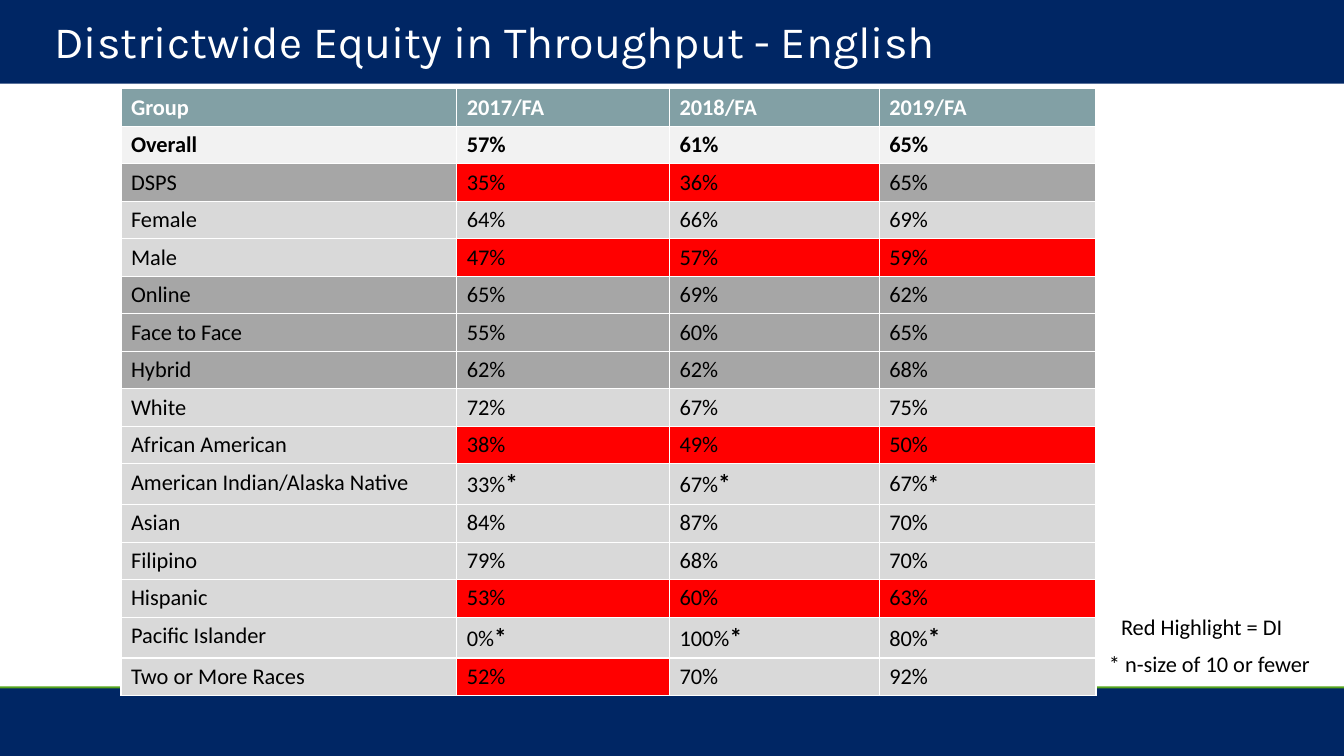
from dataclasses import dataclass

from pptx import Presentation
from pptx import util as u
from pptx.dml.color import RGBColor
from pptx.enum import shapes, text

NAVY, GREEN, TEAL = "002664", "55A51C", "82A0A5"
WHITE, BLACK, RED = "FFFFFF", "000000", "FF0000"
PALE, LIGHT, DARK = "F2F2F2", "D9D9D9", "A6A6A6"


@dataclass
class Band:
    top: float
    height: float
    color: str


@dataclass
class Label:
    box: tuple[float, float, float, float]
    words: str
    size: int = 16
    font: str = "Calibri"
    color: str = BLACK


@dataclass
class Row:
    group: str
    rates: str
    fill: str = LIGHT
    flagged: str = ""
    color: str = BLACK
    bold: bool = False
    height: float = 0.37
    star_sizes: tuple[int, int, int] = (18, 18, 18)
    anchor: text.MSO_ANCHOR = text.MSO_ANCHOR.TOP


BANDS = [Band(6.81, 0.69, GREEN), Band(6.83, 0.67, NAVY), Band(0, 0.83, NAVY)]
LABELS = [
    Label((0.44, 0.06, 12.56, 0.69), "Districtwide Equity in Throughput - English", 32, "Karla", WHITE),
    Label((10.9, 6.4, 2.4, 0.37), "* n-size of 10 or fewer"),
    Label((11.02, 6.03, 2.22, 0.37), "Red Highlight = DI"),
]
COLUMN_WIDTHS = [3.33, 2.11, 2.08, 2.15]
ROWS = [
    Row("Group", "2017/FA 2018/FA 2019/FA", TEAL, color=WHITE, bold=True),
    Row("Overall", "57% 61% 65%", PALE, bold=True),
    Row("DSPS", "35% 36% 65%", DARK, "12"),
    Row("Female", "64% 66% 69%"),
    Row("Male", "47% 57% 59%", flagged="123"),
    Row("Online", "65% 69% 62%", DARK),
    Row("Face to Face", "55% 60% 65%", DARK),
    Row("Hybrid", "62% 62% 68%", DARK),
    Row("White", "72% 67% 75%"),
    Row("African American", "38% 49% 50%", flagged="123"),
    Row("American Indian/Alaska Native", "33%* 67%* 67%*", height=0.4,
        star_sizes=(18, 18, 16), anchor=text.MSO_ANCHOR.MIDDLE),
    Row("Asian", "84% 87% 70%"),
    Row("Filipino", "79% 68% 70%"),
    Row("Hispanic", "53% 60% 63%", flagged="123"),
    Row("Pacific Islander", "0%* 100%* 80%*", height=0.4),
    Row("Two or More Races", "52% 70% 92%", flagged="1"),
]


def rgb(color: str) -> RGBColor:
    return RGBColor.from_string(color)


def add_run(p, words: str, size: int, color: str, font: str = "Calibri", bold: bool = False) -> None:
    r = p.add_run()
    r.text = words
    for name, value in {"size": u.Pt(size), "name": font, "bold": bold}.items():
        setattr(r.font, name, value)
    r.font.color.rgb = rgb(color)


def draw_band(s, band: Band, width: u.Length) -> None:
    sp = s.shapes.add_shape(shapes.MSO_SHAPE.RECTANGLE, 0, u.Inches(band.top), width, u.Inches(band.height))
    sp.shadow.inherit = False
    sp.fill.solid()
    sp.fill.fore_color.rgb = rgb(band.color)
    sp.line.fill.background()


def draw_label(s, label: Label) -> None:
    tf = s.shapes.add_textbox(*map(u.Inches, label.box)).text_frame
    for name, value in {"word_wrap": True, "vertical_anchor": text.MSO_ANCHOR.MIDDLE}.items():
        setattr(tf, name, value)
    add_run(tf.paragraphs[0], label.words, label.size, label.color, label.font)


def fill_row(table, index: int, row: Row) -> None:
    table.rows[index].height = u.Inches(row.height)
    for column, words in enumerate([row.group, *row.rates.split()]):
        cell = table.cell(index, column)
        cell.fill.solid()
        cell.fill.fore_color.rgb = rgb(RED if str(column) in row.flagged else row.fill)
        p = cell.text_frame.paragraphs[0]
        add_run(p, words.rstrip("*"), 16, row.color, bold=row.bold)
        if column:
            cell.vertical_anchor = row.anchor
        if words.endswith("*"):
            add_run(p, "*", row.star_sizes[column - 1], row.color, bold=True)


def draw_table(s) -> None:
    height = sum(row.height for row in ROWS)
    frame = s.shapes.add_table(len(ROWS), len(COLUMN_WIDTHS), u.Inches(1.2), u.Inches(0.88),
                               u.Inches(sum(COLUMN_WIDTHS)), u.Inches(height))
    table = frame.table
    table.horz_banding = False
    for column, width in zip(table.columns, COLUMN_WIDTHS):
        column.width = u.Inches(width)
    for index, row in enumerate(ROWS):
        fill_row(table, index, row)


def main() -> None:
    prs = Presentation()
    prs.slide_width, prs.slide_height = u.Inches(13.33), u.Inches(7.5)
    s = prs.slides.add_slide(prs.slide_layouts[6])
    for band in BANDS:
        draw_band(s, band, prs.slide_width)
    draw_table(s)
    for label in LABELS:
        draw_label(s, label)
    prs.save("out.pptx")


if __name__ == "__main__":
    main()
